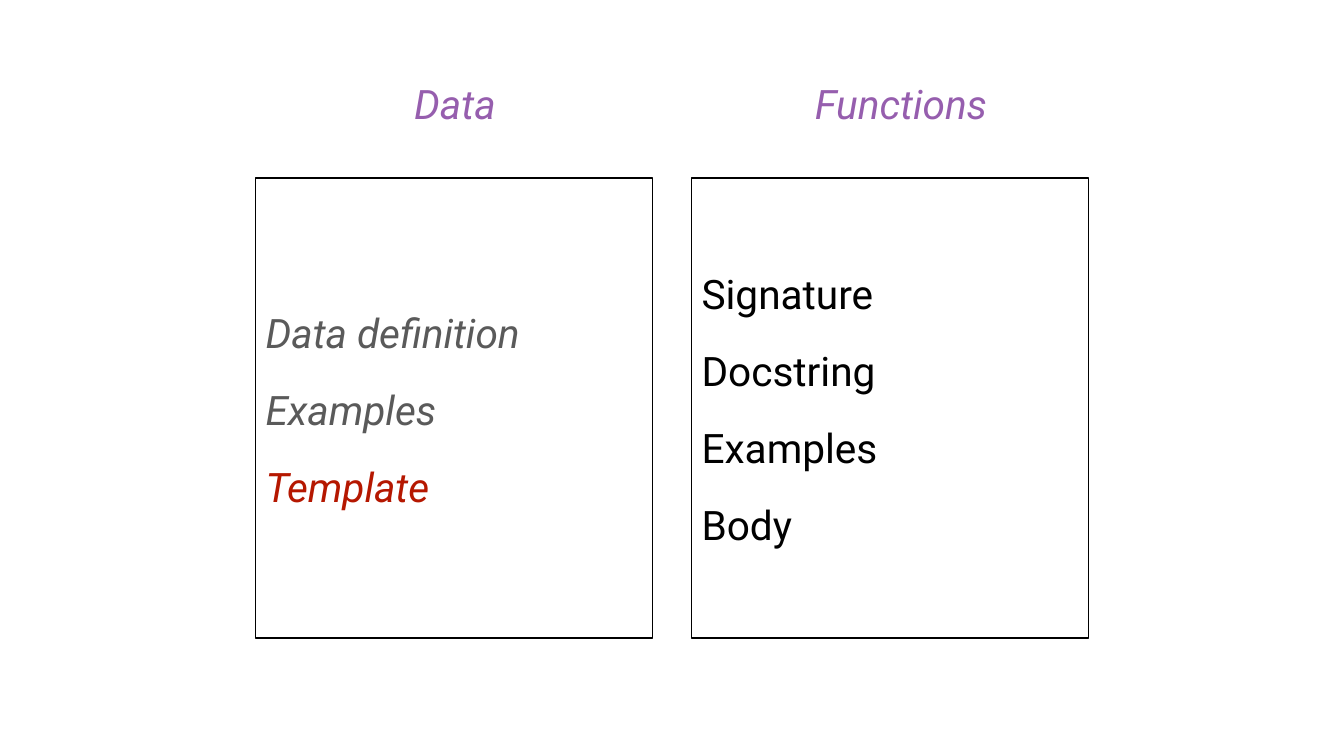
import pptx
import pptx.dml.color
import pptx.enum.shapes
import pptx.enum.text
import pptx.util
from dataclasses import dataclass

Pt = pptx.util.Pt
ANCHOR = pptx.enum.text.MSO_ANCHOR


@dataclass(frozen=True)
class Theme:
    font: str = "Roboto"
    size: float = 58
    line_spacing: float = 73
    space_before: float = 37
    border: float = 2
    paper: str = "FFFFFF"
    ink: str = "000000"
    heading: str = "965EAE"
    muted: str = "5A5A5A"
    accent: str = "B51700"


THEME = Theme()


def color(value):
    return pptx.dml.color.RGBColor.from_string(value)


def write(frame, text, ink=THEME.ink, italic=False, first=False):
    """Write one paragraph; the first one uses the frame's existing paragraph."""
    para = frame.paragraphs[0] if first else frame.add_paragraph()
    para.alignment = pptx.enum.text.PP_ALIGN.LEFT
    para.line_spacing = Pt(THEME.line_spacing)
    para.space_before = Pt(THEME.space_before)
    span = para.add_run()
    span.text = text
    span.font.name = THEME.font
    span.font.size = Pt(THEME.size)
    span.font.italic = italic
    span.font.color.rgb = color(ink)


def set_frame(frame, inset, anchor, wrap):
    frame.margin_left = frame.margin_right = Pt(inset)
    frame.margin_top = frame.margin_bottom = Pt(inset)
    frame.vertical_anchor = anchor
    frame.word_wrap = wrap


def add_heading(page, box, text):
    label = page.shapes.add_textbox(*map(Pt, box))
    frame = label.text_frame
    set_frame(frame, 7.2, ANCHOR.TOP, False)
    frame.auto_size = pptx.enum.text.MSO_AUTO_SIZE.SHAPE_TO_FIT_TEXT
    write(frame, text, ink=THEME.heading, italic=True, first=True)


def add_panel(page, box, steps, italic):
    """Draw a bordered panel listing (text, colour) steps."""
    panel = page.shapes.add_shape(
        pptx.enum.shapes.MSO_SHAPE.RECTANGLE, *map(Pt, box))
    panel.shadow.inherit = False
    panel.fill.solid()
    panel.fill.fore_color.rgb = color(THEME.paper)
    panel.line.color.rgb = color(THEME.ink)
    panel.line.width = Pt(THEME.border)
    set_frame(panel.text_frame, 14.4, ANCHOR.MIDDLE, True)
    for index, (text, ink) in enumerate(steps):
        write(panel.text_frame, text, ink=ink, italic=italic, first=index == 0)


def main():
    deck = pptx.Presentation()
    deck.slide_width, deck.slide_height = Pt(1920), Pt(1080)
    page = deck.slides.add_slide(deck.slide_layouts[6])

    data_steps = [("Data definition", THEME.muted),
                  ("Examples", THEME.muted),
                  ("Template", THEME.accent)]
    function_steps = [(text, THEME.ink) for text in
                      ("Signature", "Docstring", "Examples", "Body")]
    # heading, heading left and width, panel left, steps, italic
    columns = [("Data", 584.6, 138.2, 365, data_steps, True),
               ("Functions", 1157, 267.1, 987.8, function_steps, False)]
    for heading, left, width, panel_left, steps, italic in columns:
        add_panel(page, (panel_left, 254.2, 567.4, 657.4), steps, italic)
        add_heading(page, (left, 102.2, width, 86.4), heading)

    deck.save("out.pptx")


if __name__ == "__main__":
    main()
